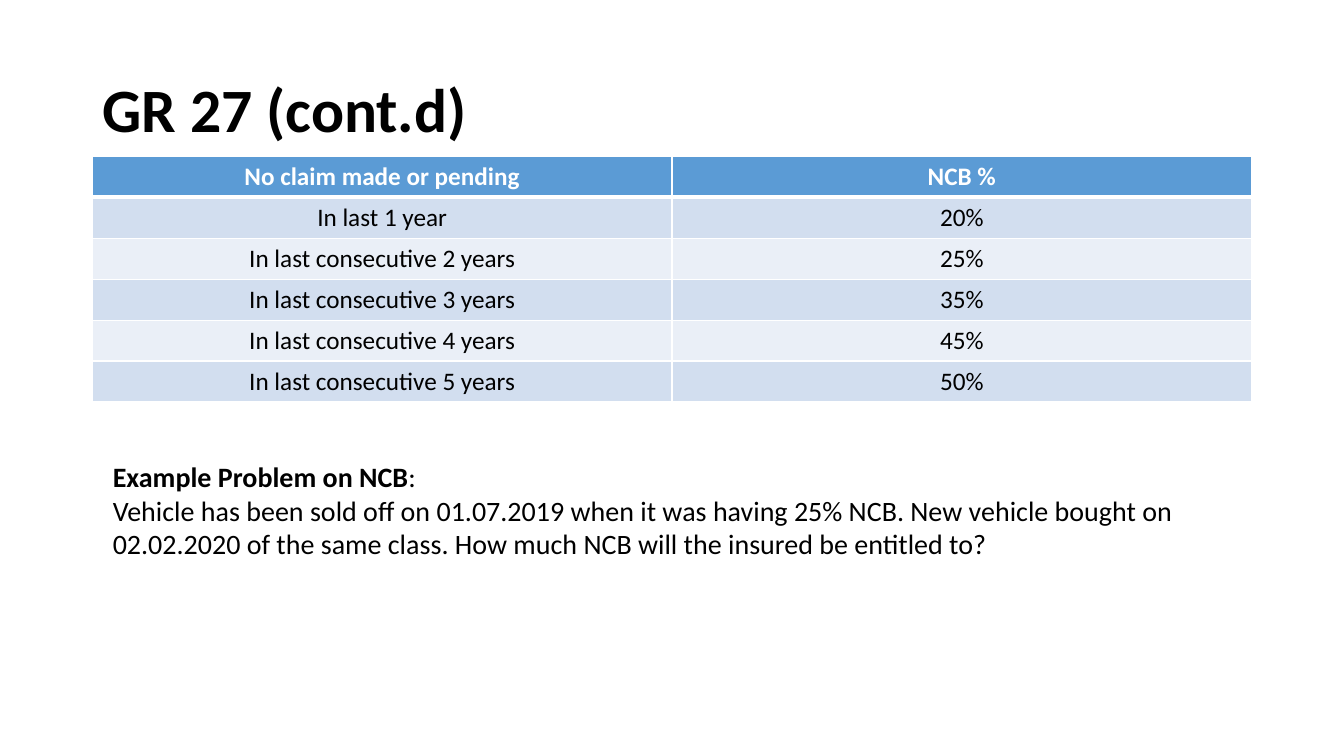
import pptx
import pptx.dml.color
import pptx.enum.text
import pptx.util
import lxml.etree
import pptx.oxml.ns

RGBColor = pptx.dml.color.RGBColor
BLACK = RGBColor(0x00, 0x00, 0x00)
WHITE = RGBColor(0xFF, 0xFF, 0xFF)
HEADER_BLUE = RGBColor(0x5B, 0x9B, 0xD5)
BAND_DARK = RGBColor(0xD2, 0xDE, 0xEF)
BAND_LIGHT = RGBColor(0xEA, 0xEF, 0xF7)

FONT = "Calibri"
EMU_PER_PX = 9525
ROW_HEIGHT = 39

NCB_ROWS = [
    ("No claim made or pending", "NCB %"),
    ("In last 1 year", "20%"),
    ("In last consecutive 2 years", "25%"),
    ("In last consecutive 3 years", "35%"),
    ("In last consecutive 4 years", "45%"),
    ("In last consecutive 5 years", "50%"),
]
EXAMPLE_HEADING = "Example Problem on NCB"
EXAMPLE_TEXT = (
    "Vehicle has been sold off on 01.07.2019 when it was having 25% NCB. "
    "New vehicle bought on 02.02.2020 of the same class. "
    "How much NCB will the insured be entitled to?"
)


def px(n):
    return pptx.util.Emu(n * EMU_PER_PX)


def style_runs(p, size, color=BLACK, bold=False):
    for r in p.runs:
        r.font.name = FONT
        r.font.size = pptx.util.Pt(size)
        r.font.bold = bold
        r.font.color.rgb = color


def add_text_box(slide, x, y, w, h):
    tf = slide.shapes.add_textbox(px(x), px(y), px(w), px(h)).text_frame
    tf.word_wrap = True
    return tf


def add_title(slide, text):
    tf = add_text_box(slide, 88, 38, 1104, 139)
    tf.vertical_anchor = pptx.enum.text.MSO_ANCHOR.MIDDLE
    tf.text = text
    p = tf.paragraphs[0]
    p.line_spacing = 0.9
    style_runs(p, 44, bold=True)


def set_border(cell, side, width):
    qn = pptx.oxml.ns.qn
    tc_pr = cell._tc.get_or_add_tcPr()
    ln = lxml.etree.SubElement(tc_pr, qn("a:" + side), w=str(pptx.util.Pt(width)))
    fill = lxml.etree.SubElement(ln, qn("a:solidFill"))
    lxml.etree.SubElement(fill, qn("a:srgbClr"), val=str(WHITE))


def format_cell(cell, text, row):
    header = row == 0
    widths = {"lnL": 1, "lnR": 1, "lnT": 3 if row == 1 else 1, "lnB": 3 if header else 1}
    for side, width in widths.items():
        set_border(cell, side, width)
    cell.fill.solid()
    band = BAND_DARK if row % 2 else BAND_LIGHT
    cell.fill.fore_color.rgb = HEADER_BLUE if header else band
    cell.text_frame.text = text
    p = cell.text_frame.paragraphs[0]
    p.alignment = pptx.enum.text.PP_ALIGN.CENTER
    style_runs(p, 18, WHITE if header else BLACK, header)


def add_ncb_table(slide, rows):
    height = ROW_HEIGHT * len(rows)
    table = slide.shapes.add_table(
        len(rows), len(rows[0]), px(88), px(149), px(1104), px(height)
    ).table
    for i, values in enumerate(rows):
        table.rows[i].height = px(ROW_HEIGHT)
        for j, value in enumerate(values):
            format_cell(table.cell(i, j), value, i)


def add_example(slide, heading, text):
    tf = add_text_box(slide, 98, 433, 1100, 107)
    tf.text = heading
    p = tf.paragraphs[0]
    p.add_run().text = ":"
    style_runs(p, 20)
    p.runs[0].font.bold = True
    p = tf.add_paragraph()
    p.text = text
    style_runs(p, 20)


def main():
    prs = pptx.Presentation()
    prs.slide_width, prs.slide_height = px(1280), px(720)
    slide = prs.slides.add_slide(prs.slide_layouts[6])
    add_title(slide, "GR 27 (cont.d)")
    add_ncb_table(slide, NCB_ROWS)
    add_example(slide, EXAMPLE_HEADING, EXAMPLE_TEXT)
    prs.save("out.pptx")


if __name__ == "__main__":
    main()
